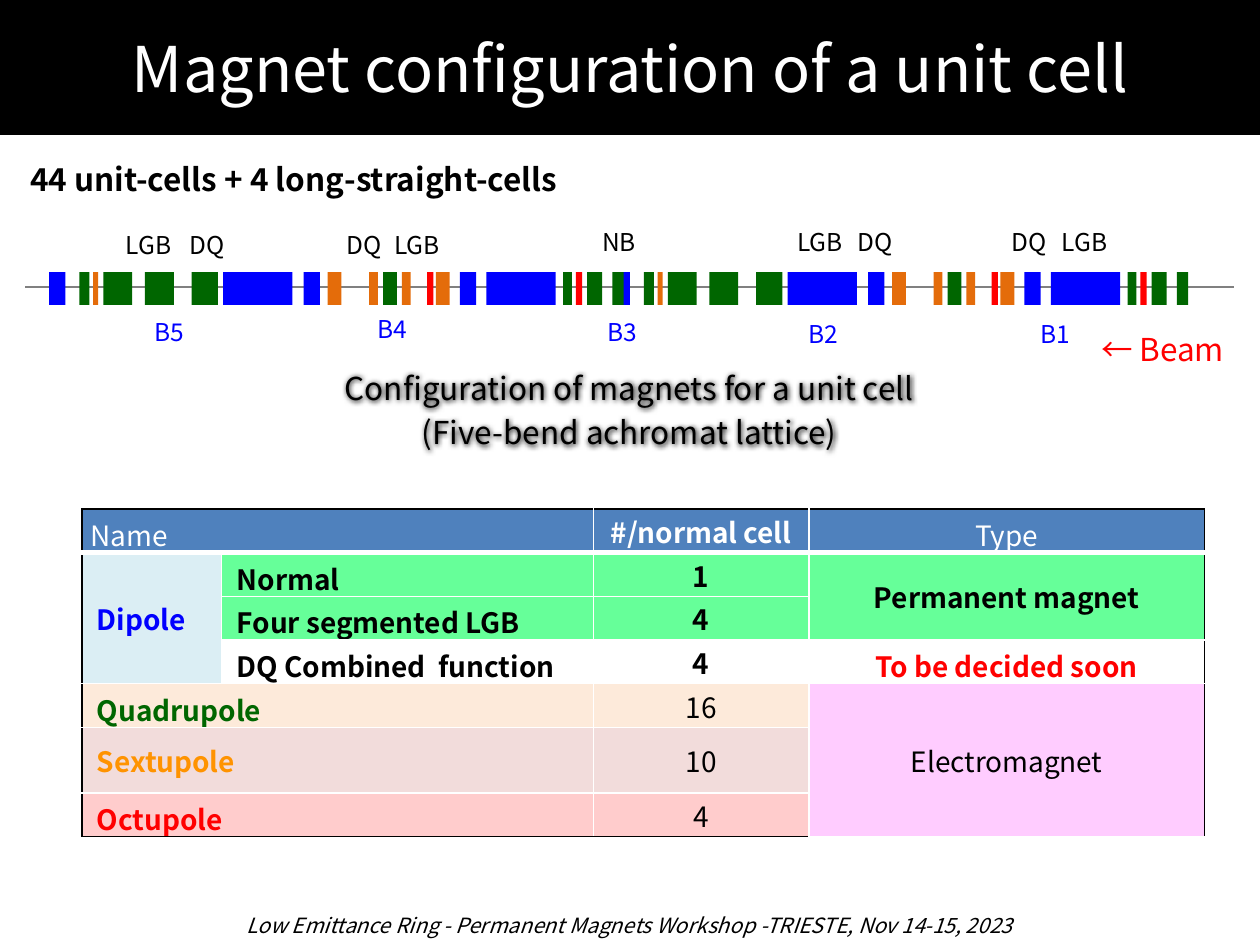
"""Build the slide on the magnet configuration of a unit cell."""
from lxml import etree
from pptx import Presentation
from pptx import util as u
from pptx.dml.color import RGBColor
from pptx.enum import shapes, text
from pptx.oxml import ns

FONT = "Noto Sans CJK JP"
BLACK, WHITE, BLUE, GREEN = "000000", "FFFFFF", "0000FF", "006600"
ORANGE, RED, HEADER = "E46C0A", "FF0000", "4F81BD"
MINT, PEACH, ROSE, PINK = "66FF99", "FDEADA", "F2DCDB", "FFCCCC"
ICE, LILAC, AMBER = "DBEEF4", "FFCCFF", "FF9300"
LEFT, CENTER = text.PP_ALIGN.LEFT, text.PP_ALIGN.CENTER
MIDDLE, TOP = text.MSO_ANCHOR.MIDDLE, text.MSO_ANCHOR.TOP

HALF_PITCH = 4.48
HALF_LATTICE = [
    (BLUE, [(3.65, 0.13), (3.86, 0.55), (2.41, 0.13), (1.77, 0.55), (0.39, 0.13)]),
    (GREEN, [(0.63, 0.08), (0.82, 0.23), (1.15, 0.23), (1.52, 0.21),
             (3.04, 0.11), (4.47, 0.07), (4.66, 0.12), (4.86, 0.09)]),
    (ORANGE, [(2.93, 0.07), (2.6, 0.11), (3.19, 0.07), (3.46, 0.11), (0.74, 0.04)]),
    (RED, [(3.39, 0.05), (4.57, 0.05)]),
]
MAGNET_LABELS = [
    ("DQ", 7.93, 1.75), ("DQ", 6.71, 1.75), ("LGB", 6.23, 1.75),
    ("LGB", 8.33, 1.75), ("NB", 4.68, 1.75), ("DQ", 1.41, 1.78),
    ("LGB", 0.9, 1.78), ("DQ", 2.65, 1.78), ("LGB", 3.03, 1.78),
]
LABEL_WIDTHS = {"DQ": 0.5, "LGB": 0.58, "NB": 0.48}
BEND_LABELS = [("B1", 8.16, 2.48), ("B2", 6.32, 2.48), ("B3", 4.72, 2.47),
               ("B4", 2.9, 2.44), ("B5", 1.13, 2.47)]

COLUMNS = [1.11, 2.95, 1.71, 3.14]
ROWS = [0.3, 0.3, 0.3, 0.24, 0.3, 0.52, 0.3]
MERGES = [((0, 0), (0, 1)), ((1, 0), (3, 0)), ((1, 3), (2, 3)), ((4, 0), (4, 1)),
          ((4, 3), (6, 3)), ((5, 0), (5, 1)), ((6, 0), (6, 1))]
CELLS = [
    [("Name", HEADER, WHITE, False), ("", HEADER, WHITE, False),
     ("#/normal cell", HEADER, WHITE, True), ("Type", HEADER, WHITE, False)],
    [(" Dipole", ICE, BLUE, True), (" Normal", MINT, BLACK, True),
     ("1", MINT, BLACK, True), ("Permanent magnet", MINT, BLACK, True)],
    [("", ICE, BLUE, True), (" Four segmented LGB", MINT, BLACK, True),
     ("4", MINT, BLACK, True), ("", MINT, BLACK, True)],
    [("", ICE, BLUE, True), (" DQ Combined  function", WHITE, BLACK, True),
     ("4", WHITE, BLACK, True), ("To be decided soon", WHITE, RED, True)],
    [(" Quadrupole", PEACH, GREEN, True), ("", PEACH, GREEN, True),
     ("16", PEACH, BLACK, False), ("Electromagnet", LILAC, BLACK, False)],
    [(" Sextupole", ROSE, AMBER, True), ("", ROSE, AMBER, True),
     ("10", ROSE, BLACK, False), ("", LILAC, BLACK, False)],
    [(" Octupole", PINK, RED, True), ("", PINK, RED, True),
     ("4", PINK, BLACK, False), ("", LILAC, BLACK, False)],
]


def rgb(color):
    return RGBColor.from_string(color)


def inches(*lengths):
    return [u.Inches(length) for length in lengths]


class Deck:
    """Hold the style and the current slide."""

    def __init__(self):
        self.presentation = Presentation()
        self.presentation.slide_width, self.presentation.slide_height = inches(10, 7.5)
        self.slide = self.presentation.slides.add_slide(self.presentation.slide_layouts[5])

    def fill_text(self, frame, lines, size, color, bold=False, italic=False,
                  align=LEFT, before=0):
        frame.text = lines
        for paragraph in frame.paragraphs:
            paragraph.alignment = align
            paragraph.space_before = u.Pt(before)
            font = paragraph.font
            font.name, font.size = FONT, u.Pt(size)
            font.bold, font.italic = bold, italic
            font.color.rgb = rgb(color)

    def title(self, words):
        banner = self.slide.shapes.title
        banner.left, banner.top, banner.width, banner.height = inches(0, 0, 10, 1.07)
        banner.fill.solid()
        banner.fill.fore_color.rgb = rgb(BLACK)
        banner.text_frame.vertical_anchor = MIDDLE
        self.fill_text(banner.text_frame, words, 36, WHITE, align=CENTER)

    def text(self, place, words, size, color, wrap=True, **style):
        box = self.slide.shapes.add_textbox(*inches(*place))
        box.text_frame.word_wrap = wrap
        self.fill_text(box.text_frame, words, size, color, **style)
        return box

    def glow(self, box):
        effects = etree.SubElement(box._element.spPr, ns.qn("a:effectLst"))
        shadow = etree.SubElement(effects, ns.qn("a:outerShdw"), blurRad="38100", dist="0")
        etree.SubElement(shadow, ns.qn("a:srgbClr"), val=BLACK)

    def line(self, start, end, color, width):
        beamline = self.slide.shapes.add_connector(
            shapes.MSO_CONNECTOR.STRAIGHT, *inches(*start, *end))
        beamline.line.color.rgb = rgb(color)
        beamline.line.width = u.Pt(width)
        etree.SubElement(beamline._element.spPr, ns.qn("a:effectLst"))

    def block(self, place, color):
        magnet = self.slide.shapes.add_shape(shapes.MSO_SHAPE.RECTANGLE, *inches(*place))
        magnet.shadow.inherit = False
        magnet.fill.solid()
        magnet.fill.fore_color.rgb = rgb(color)
        magnet.line.fill.background()

    def borders(self, cell, edges):
        properties = cell._tc.get_or_add_tcPr()
        for position, (side, (color, width)) in enumerate(edges.items()):
            edge = etree.Element(ns.qn(f"a:ln{side}"), w=str(u.Pt(width)))
            fill = etree.SubElement(edge, ns.qn("a:solidFill"))
            etree.SubElement(fill, ns.qn("a:srgbClr"), val=color)
            properties.insert(position, edge)

    def table(self, place):
        grid = self.slide.shapes.add_table(len(ROWS), len(COLUMNS), *inches(*place)).table
        for column, width in zip(grid.columns, COLUMNS):
            column.width = u.Inches(width)
        for row, height in zip(grid.rows, ROWS):
            row.height = u.Inches(height)
        last_row, last_column = len(ROWS) - 1, len(COLUMNS) - 1
        for r, row in enumerate(CELLS):
            for c, (words, fill, color, bold) in enumerate(row):
                cell = grid.cell(r, c)
                margins = (0.01, 0.01, 0.01, 0) if c == 2 else (0.07, 0.04, 0.07, 0.04)
                (cell.margin_left, cell.margin_top,
                 cell.margin_right, cell.margin_bottom) = inches(*margins)
                cell.vertical_anchor = TOP if c == 1 or (r, c) == (0, 0) else MIDDLE
                cell.fill.solid()
                cell.fill.fore_color.rgb = rgb(fill)
                self.fill_text(cell.text_frame, words, 16, color, bold,
                               align=CENTER if c > 1 else LEFT)
                self.borders(cell, {
                    "L": (WHITE if c else BLACK, 1),
                    "R": (BLACK if c == last_column else WHITE, 1),
                    "T": (WHITE, 3 if r == 1 else 1) if r else (BLACK, 1),
                    "B": (BLACK, 1) if r == last_row else (WHITE, 1 if r else 3),
                })
        for first, last in MERGES:
            grid.cell(*first).merge(grid.cell(*last))


def main():
    deck = Deck()
    deck.title("Magnet configuration of a unit cell")
    deck.text((8.64, 2.57, 1.25, 0.4), "← Beam", 18, RED, wrap=False)
    deck.table((0.65, 4.04, 8.91, 2.57))
    deck.line((0.2, 2.28), (9.79, 2.28), "808080", 1)
    for offset in (HALF_PITCH, 0):
        for color, magnets in HALF_LATTICE:
            for left, width in magnets:
                deck.block((left + offset, 2.16, width, 0.26), color)
    for name, left, top in MAGNET_LABELS:
        deck.text((left, top, LABEL_WIDTHS[name], 0.34), name, 14, BLACK, wrap=False)
    for name, left, top in BEND_LABELS:
        deck.text((left, top, 0.46, 0.34), name, 14, BLUE, wrap=False)
    deck.text((0.14, 1.22, 4.91, 0.4), "44 unit-cells + 4 long-straight-cells",
              18, BLACK, bold=True, before=3.6)
    caption = deck.text((1.38, 2.88, 7.23, 1.09),
                        "Configuration of magnets for a unit cell\n(Five-bend achromat lattice)",
                        18, BLACK, align=CENTER, before=3.6)
    deck.glow(caption)
    deck.text((0, 7.19, 10, 0.3),
              "Low Emittance Ring - Permanent Magnets Workshop -TRIESTE, Nov 14-15, 2023",
              12, BLACK, italic=True, align=CENTER)
    deck.presentation.save("out.pptx")


if __name__ == "__main__":
    main()
